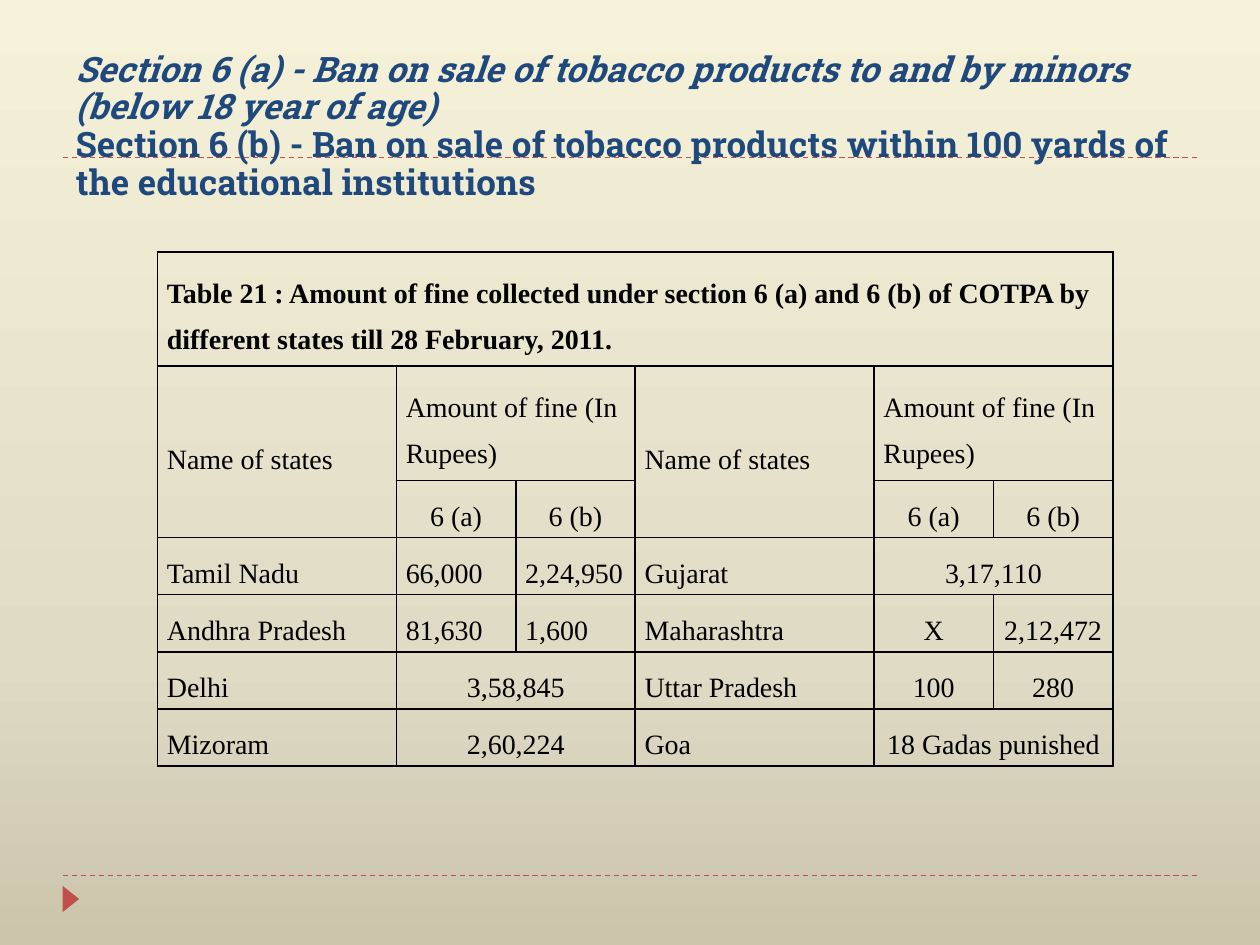
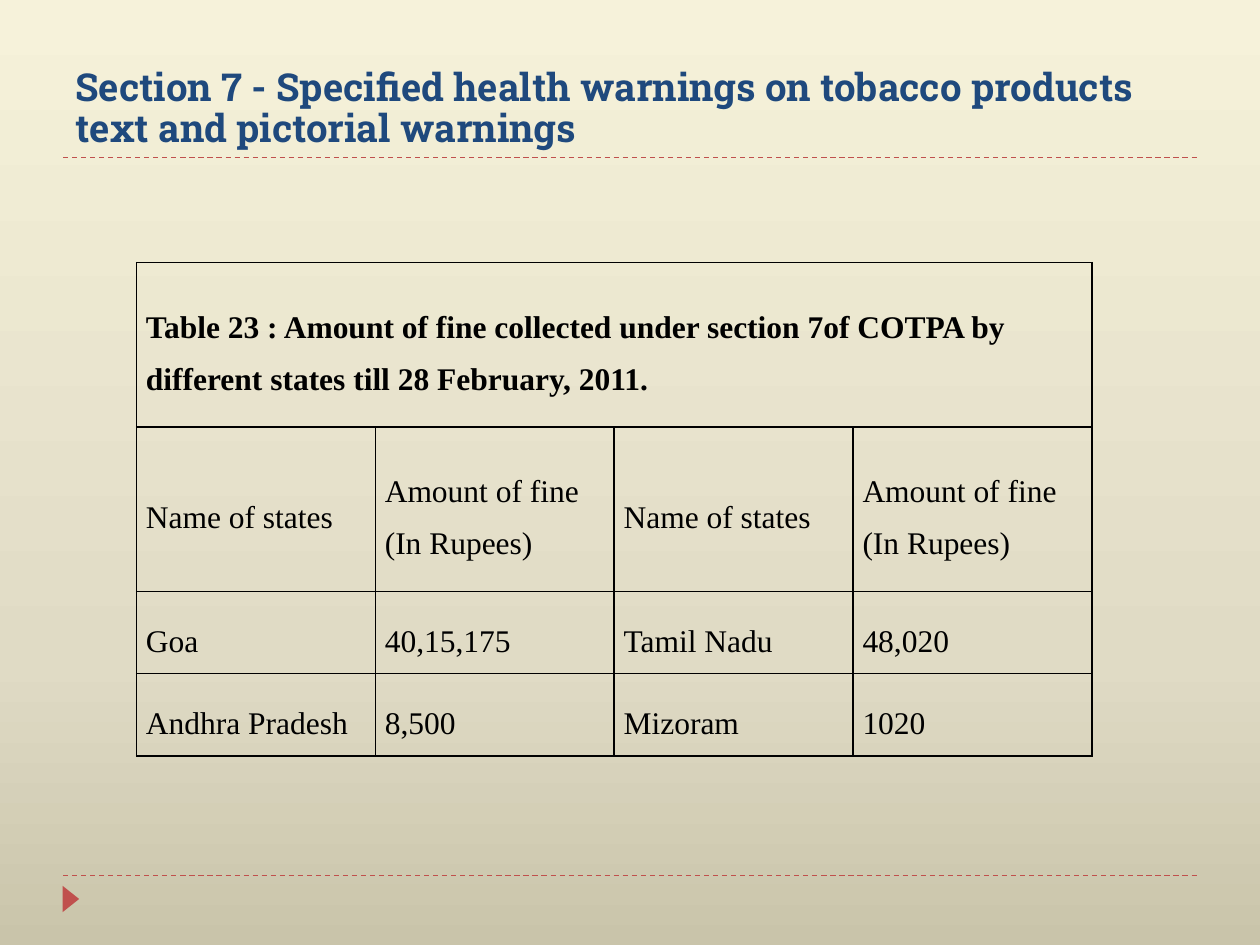
"""Build two slides on fines collected under the tobacco control act."""
from copy import deepcopy

from lxml import etree
from pptx import Presentation
from pptx.dml.color import RGBColor
from pptx.enum.dml import MSO_LINE
from pptx.enum.shapes import MSO_CONNECTOR, MSO_SHAPE
from pptx.enum.text import MSO_ANCHOR, MSO_AUTO_SIZE, PP_ALIGN
from pptx.oxml.ns import qn
from pptx.util import Pt

STRAIGHT = MSO_CONNECTOR.STRAIGHT
TRIANGLE = MSO_SHAPE.ISOSCELES_TRIANGLE
DASH = MSO_LINE.DASH
MIDDLE, BOTTOM = MSO_ANCHOR.MIDDLE, MSO_ANCHOR.BOTTOM
LEFT, CENTER = PP_ALIGN.LEFT, PP_ALIGN.CENTER
NO_AUTOFIT = MSO_AUTO_SIZE.NONE

COLORS = {"title": "1F497D", "accent": "C0504D", "ink": "000000"}
BACKGROUND_STOPS = [(0, "C9C4AA"), (0.3, "E0DBC5"), (1, "F6F2DA")]
TITLE_FONT, TABLE_FONT = "Roboto Slab", "Times New Roman"
MARGIN, CONTENT_WIDTH = 36, 648
RULE_TOPS = (90, 500.4)
TABLE_WIDTH = 546

ACROSS, DOWN = "<", "^"

SLIDES = [
    {
        "title": [
            ("Section 6 (a) - Ban on sale of tobacco products to and by minors "
             "(below 18 year of age)", True),
            ("Section 6 (b) - Ban on sale of tobacco products within 100 yards "
             "of the educational institutions", False),
        ],
        "title_size": 20, "title_top": 41.8, "title_height": 77.8,
        "table_left": 90, "table_top": 144, "table_size": 16,
        "column_units": [2, 1, 1, 2, 1, 1],
        "row_units": [2, 2, 1, 1, 1, 1, 1], "row_unit": 32.65,
        "rows": [
            ["Table 21 : Amount of fine collected under section 6 (a) and 6 (b) "
             "of COTPA by different states till 28 February, 2011."] + [ACROSS] * 5,
            ["Name of states", "Amount of fine (In Rupees)", ACROSS] * 2,
            [DOWN, "6 (a)", "6 (b)"] * 2,
            ["Tamil Nadu", "66,000", "2,24,950", "Gujarat", "3,17,110", ACROSS],
            ["Andhra Pradesh", "81,630", "1,600", "Maharashtra", "X", "2,12,472"],
            ["Delhi", "3,58,845", ACROSS, "Uttar Pradesh", "100", "280"],
            ["Mizoram", "2,60,224", ACROSS, "Goa", "18 Gadas punished", ACROSS],
        ],
        "centered": {"6 (a)", "6 (b)", "3,17,110", "X", "2,12,472", "3,58,845",
                     "100", "280", "2,60,224", "18 Gadas punished"},
    },
    {
        "title": [
            ("Section 7 - Specified health warnings on tobacco products text "
             "and pictorial warnings", False),
        ],
        "title_size": 22, "title_top": 23.8, "title_height": 66.2,
        "table_left": 78, "table_top": 150, "table_size": 18,
        "column_units": [1, 1, 1, 1],
        "row_units": [2, 2, 1, 1], "row_unit": 47,
        "rows": [
            ["Table 23 : Amount of fine collected under section 7of COTPA by "
             "different states till 28 February, 2011."] + [ACROSS] * 3,
            ["Name of states", "Amount of fine (In Rupees)"] * 2,
            ["Goa", "40,15,175", "Tamil Nadu", "48,020"],
            ["Andhra Pradesh", "8,500", "Mizoram", "1020"],
        ],
        "centered": set(),
    },
]


def color(name):
    return RGBColor.from_string(COLORS[name])


def style_run(run, font_name, size, color_name, bold, italic=False):
    font = run.font
    font.name, font.size = font_name, Pt(size)
    font.bold, font.italic = bold, italic
    font.color.rgb = color(color_name)


def paint_background(layout):
    fill = layout.background.fill
    fill.gradient()
    fill.gradient_angle = 90
    stop_list = layout.element.find(".//" + qn("a:gsLst"))
    stop_list.append(deepcopy(stop_list[-1]))
    for stop, (position, value) in zip(fill.gradient_stops, BACKGROUND_STOPS):
        stop.position = position
        stop.color.rgb = RGBColor.from_string(value)


def decorate_layout(layout, slide):
    """Draw the shared rules and marker, then hand them to the layout."""
    decorations = []
    for top in RULE_TOPS:
        rule = slide.shapes.add_connector(
            STRAIGHT, Pt(MARGIN), Pt(top), Pt(MARGIN + CONTENT_WIDTH), Pt(top))
        rule.line.color.rgb = color("accent")
        rule.line.width = Pt(0.75)
        rule.line.dash_style = DASH
        etree.SubElement(rule._element.spPr, qn("a:effectLst"))
        decorations.append(rule)
    marker = slide.shapes.add_shape(TRIANGLE, Pt(33), Pt(509), Pt(15), Pt(9.4))
    marker.rotation = 90
    marker.shadow.inherit = False
    marker.fill.solid()
    marker.fill.fore_color.rgb = color("accent")
    marker.line.fill.background()
    decorations.append(marker)
    for shape in decorations:
        layout.shapes._spTree.append(shape._element)


def add_title(slide, content):
    title = slide.shapes.title
    title.left, title.top = Pt(MARGIN), Pt(content["title_top"])
    title.width, title.height = Pt(CONTENT_WIDTH), Pt(content["title_height"])
    frame = title.text_frame
    frame.word_wrap = True
    frame.auto_size = NO_AUTOFIT
    frame.vertical_anchor = BOTTOM
    paragraph = frame.paragraphs[0]
    paragraph.text = "\v".join(text for text, _ in content["title"])
    paragraph.alignment = LEFT
    paragraph.line_spacing = 0.9
    for run, (_, italic) in zip(paragraph.runs, content["title"]):
        style_run(run, TITLE_FONT, content["title_size"], "title", True, italic)


def format_cell(cell):
    cell.fill.background()
    cell.vertical_anchor = MIDDLE
    cell.margin_left = cell.margin_right = Pt(5.4)
    cell.margin_top = cell.margin_bottom = 0
    properties = cell._tc.get_or_add_tcPr()
    for index, side in enumerate(("a:lnL", "a:lnR", "a:lnT", "a:lnB")):
        border = etree.Element(qn(side), w=str(Pt(1)))
        fill = etree.SubElement(border, qn("a:solidFill"))
        etree.SubElement(fill, qn("a:srgbClr"), val=COLORS["ink"])
        properties.insert(index, border)


def count_marks(cells, mark):
    count = 0
    for text in cells:
        if text != mark:
            break
        count += 1
    return count


def add_fine_table(slide, content):
    rows = content["rows"]
    column_units, row_units = content["column_units"], content["row_units"]
    row_unit = content["row_unit"]
    table = slide.shapes.add_table(
        len(rows), len(column_units), Pt(content["table_left"]),
        Pt(content["table_top"]), Pt(TABLE_WIDTH),
        Pt(row_unit * sum(row_units))).table
    table.first_row = table.horz_banding = False
    for column, units in zip(table.columns, column_units):
        column.width = Pt(TABLE_WIDTH * units / sum(column_units))
    for row, units in zip(table.rows, row_units):
        row.height = Pt(row_unit * units)

    for row_index, texts in enumerate(rows):
        for column_index, text in enumerate(texts):
            cell = table.cell(row_index, column_index)
            format_cell(cell)
            if text in (ACROSS, DOWN):
                continue
            below = [row[column_index] for row in rows[row_index + 1:]]
            extra_columns = count_marks(texts[column_index + 1:], ACROSS)
            extra_rows = count_marks(below, DOWN)
            if extra_columns or extra_rows:
                cell.merge(table.cell(row_index + extra_rows,
                                      column_index + extra_columns))
            paragraph = cell.text_frame.paragraphs[0]
            paragraph.text = text
            paragraph.line_spacing = 1.5
            paragraph.alignment = CENTER if text in content["centered"] else LEFT
            style_run(paragraph.runs[0], TABLE_FONT, content["table_size"],
                      "ink", row_index == 0)


def main():
    presentation = Presentation()
    presentation.slide_width, presentation.slide_height = Pt(720), Pt(540)
    layout = presentation.slide_layouts[5]
    paint_background(layout)
    for index, content in enumerate(SLIDES):
        slide = presentation.slides.add_slide(layout)
        if index == 0:
            decorate_layout(layout, slide)
        add_title(slide, content)
        add_fine_table(slide, content)
    presentation.save("out.pptx")


if __name__ == "__main__":
    main()
